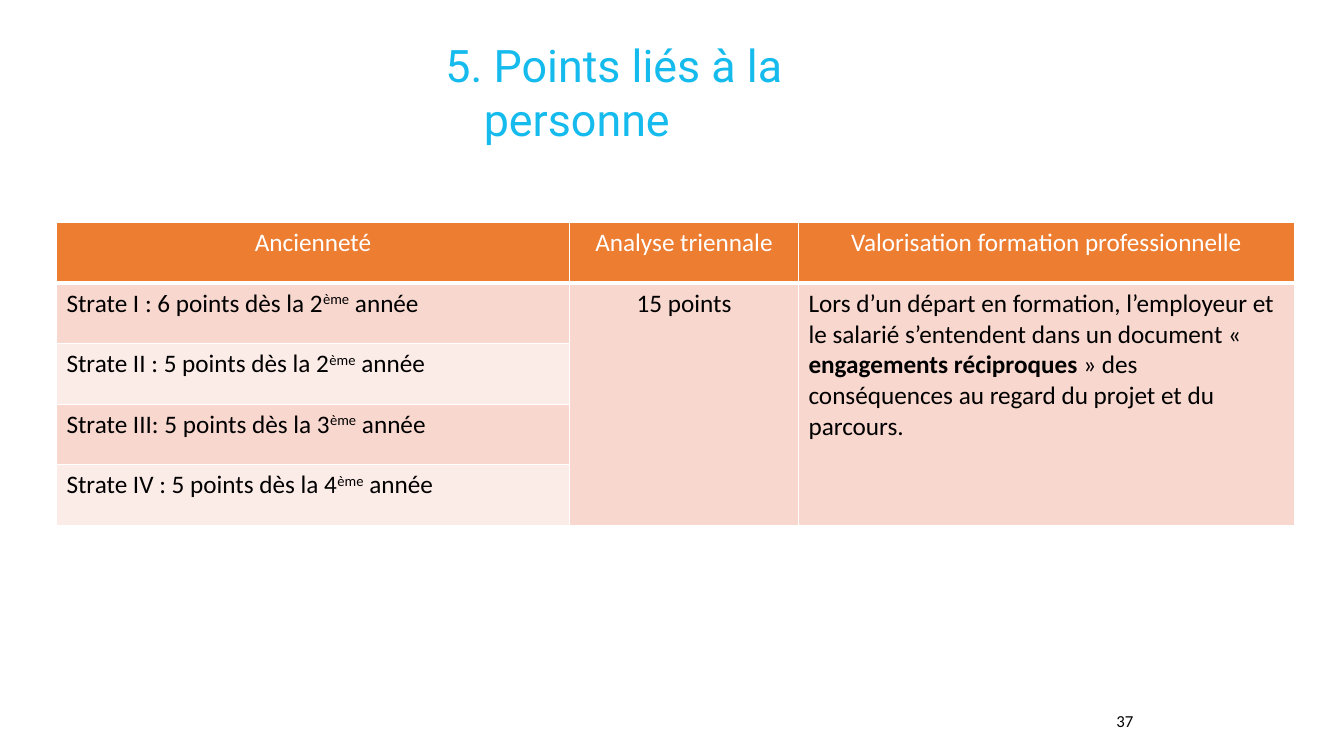
from lxml import etree
from pptx import Presentation
from pptx import util as u
from pptx.dml.color import RGBColor
from pptx.enum import text
from pptx.oxml import ns

COLORS = {"title": "16BBEE", "header": "ED7D31", "band": "F8D7CE",
          "light": "FCECE8", "white": "FFFFFF", "black": "000000"}


def add_run(p, words, color, size=18, name="Calibri", bold=False):
    r = p.add_run()
    r.text = words
    for key, value in {"size": u.Pt(size), "name": name, "bold": bold}.items():
        setattr(r.font, key, value)
    r.font.color.rgb = RGBColor.from_string(COLORS[color])
    return r


def add_border(cell, side, points):
    ln = etree.SubElement(cell._tc.get_or_add_tcPr(), ns.qn(f"a:ln{side}"), w=str(u.Pt(points)))
    fill = etree.SubElement(ln, ns.qn("a:solidFill"))
    etree.SubElement(fill, ns.qn("a:srgbClr"), val=COLORS["white"])


prs = Presentation()
prs.slide_width, prs.slide_height = u.Inches(13.33), u.Inches(7.5)
s = prs.slides.add_slide(prs.slide_layouts[6])

# Title with a hanging indent
title = s.shapes.add_textbox(u.Inches(4.32), u.Inches(0.33), u.Inches(5.42), u.Inches(0.64))
tf = title.text_frame
for key, value in {"word_wrap": True, "margin_right": u.Inches(0.3),
                   "auto_size": text.MSO_AUTO_SIZE.SHAPE_TO_FIT_TEXT}.items():
    setattr(tf, key, value)
p = tf.paragraphs[0]
pPr = p._p.get_or_add_pPr()
pPr.set("marL", str(u.Inches(0.38)))
pPr.set("indent", str(u.Inches(-0.38)))
add_run(p, "5. Points liés à la personne", "title", 32, "Roboto")

# Slide number
number = s.shapes.add_textbox(u.Inches(10.71), u.Inches(6.95), u.Inches(0.63), u.Inches(0.4))
tf = number.text_frame
tf.word_wrap = True
tf.vertical_anchor = text.MSO_ANCHOR.MIDDLE
tf.paragraphs[0].alignment = text.PP_ALIGN.RIGHT
add_run(tf.paragraphs[0], "37", "black", 12)

# Table grid, fills and borders
table = s.shapes.add_table(5, 3, u.Inches(0.56), u.Inches(2.21), u.Inches(12.28), u.Inches(3)).table
for column, width in zip(table.columns, (5.09, 2.27, 4.92)):
    column.width = u.Inches(width)
for i, row in enumerate(table.rows):
    row.height = u.Inches(0.6)
    for j, cell in enumerate(row.cells):
        for side in "LRTB":
            add_border(cell, side, 3 if i == 0 and side == "B" else 1)
        shade = "header" if i == 0 else "light" if j == 0 and i % 2 == 0 else "band"
        cell.fill.solid()
        cell.fill.fore_color.rgb = RGBColor.from_string(COLORS[shade])
for j in (1, 2):
    table.cell(1, j).merge(table.cell(4, j))

# Header row
for j, heading in enumerate(("Ancienneté", "Analyse triennale", "Valorisation formation professionnelle")):
    p = table.cell(0, j).text_frame.paragraphs[0]
    p.alignment = text.PP_ALIGN.CENTER
    add_run(p, heading, "white")

# Seniority points
strata = ("Strate I : 6 points dès la 2", "Strate II : 5 points dès la 2",
          "Strate III: 5 points dès la 3", "Strate IV : 5 points dès la 4")
for i, stratum in enumerate(strata, 1):
    p = table.cell(i, 0).text_frame.paragraphs[0]
    add_run(p, stratum, "black")
    add_run(p, "ème", "black").font._element.set("baseline", "30000")
    add_run(p, " année", "black")

# Three-year review and training
p = table.cell(1, 1).text_frame.paragraphs[0]
p.alignment = text.PP_ALIGN.CENTER
add_run(p, "15 points", "black")
p = table.cell(1, 2).text_frame.paragraphs[0]
add_run(p, "Lors d’un départ en formation, l’employeur et le salarié s’entendent dans un document « ", "black")
add_run(p, "engagements réciproques", "black", bold=True)
add_run(p, " » des conséquences au regard du projet et du parcours.", "black")

prs.save("out.pptx")
